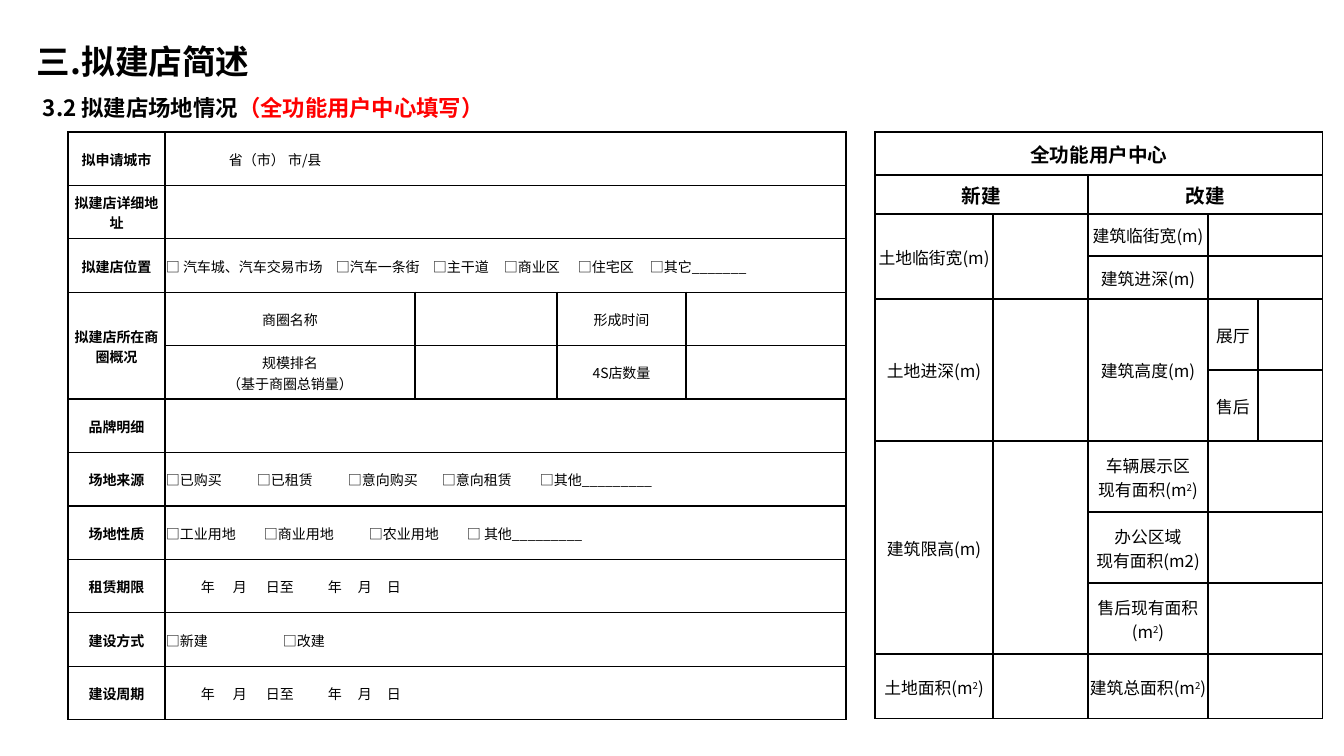
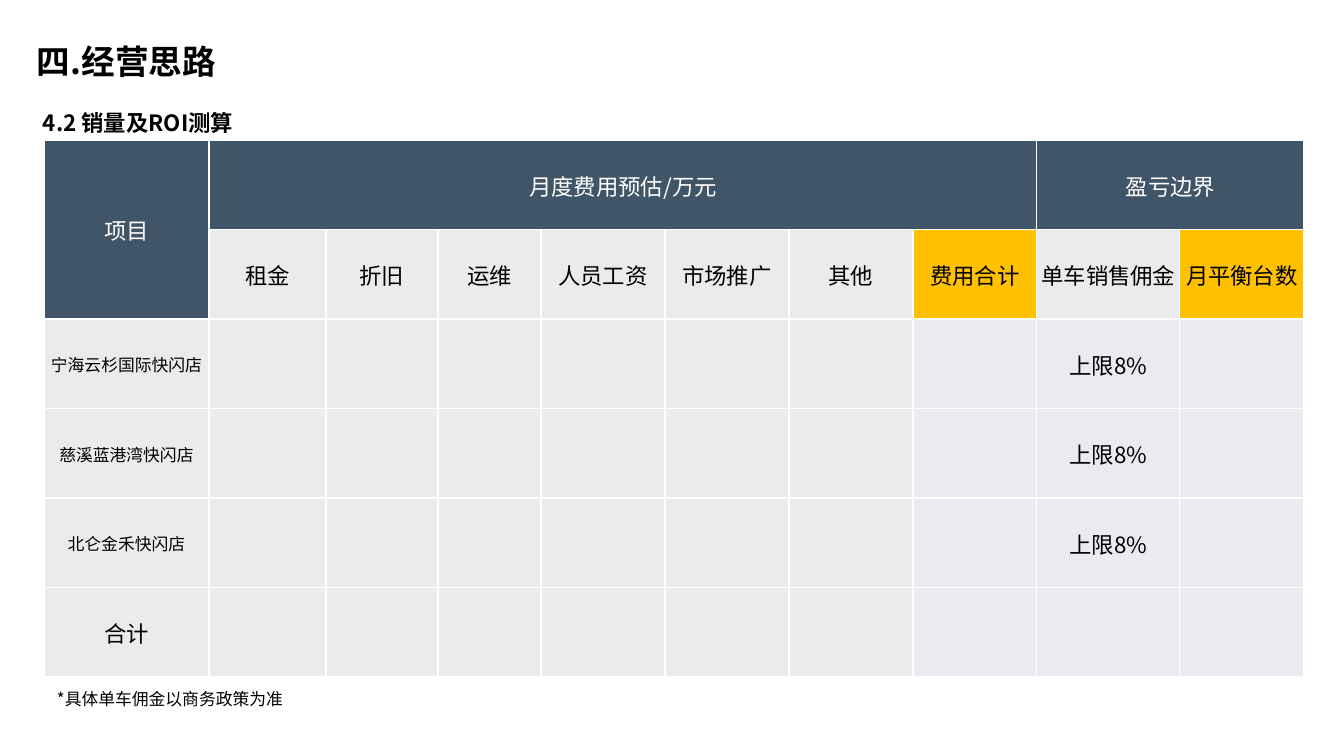
from itertools import groupby

from lxml import etree
from pptx import Presentation
from pptx.dml.color import RGBColor
from pptx.enum import text as t
from pptx.oxml.ns import qn
from pptx.util import Pt

PX = 9071  # EMU per px, 100.8 px to the inch


class Theme:
    font = "Noto Sans CJK SC"
    black, white, red = "000000", "FFFFFF", "FF0000"
    navy, gold, grey, mist = "405567", "FFC000", "E9EBED", "E9EBF0"
    heading = dict(size=24, bold=True, color=black)
    subtitle = dict(size=16, bold=True, color=black)
    alert = dict(subtitle, color=red)
    label = dict(size=10, bold=True, color=black)
    entry = dict(label, bold=False)
    plan_head = dict(size=14, bold=True, color=black)
    body = dict(size=12, bold=False, color=black)
    cost = dict(body, size=16)
    cost_head = dict(cost, color=white)


CENTER, LEFT = t.PP_ALIGN.CENTER, t.PP_ALIGN.LEFT


def write(tf, text, style, align=LEFT, tabs=(), spacing=None):
    """Append text; ~ is an underlined tab, ² a raised 2, a newline a new paragraph."""
    p = tf.paragraphs[-1]
    for mark, chars in groupby(text, lambda c: c if c in "~²\n" else ""):
        if mark == "\n":
            p = tf.add_paragraph()
            continue
        p.alignment, p.line_spacing = align, spacing
        r = p.add_run()
        r.text = {"~": "\t", "²": "2"}.get(mark) or "".join(chars)
        values = dict(name=Theme.font, size=Pt(style["size"]), bold=style["bold"],
                      underline=True if mark == "~" else None)
        for key, value in values.items():
            setattr(r.font, key, value)
        r.font.color.rgb = RGBColor.from_string(style["color"])
        rPr = r._r.get_or_add_rPr()
        etree.SubElement(rPr, qn("a:ea"), typeface=Theme.font)
        if mark == "²":
            rPr.set("baseline", "30000")
    if tabs:
        tab_list = etree.SubElement(p._p.get_or_add_pPr(), qn("a:tabLst"))
        for stop in tabs:
            etree.SubElement(tab_list, qn("a:tab"), pos=str(stop * PX), algn="l")


def grid(s, left, top, height, cols, row_count, spans, edge):
    """Add an unfilled table with even rows; spans are (row, column, last row, last column)."""
    table = s.shapes.add_table(row_count, len(cols), left * PX, top * PX,
                               sum(cols) * PX, height * PX).table
    table.first_row = table.horz_banding = False
    for col, width in zip(table.columns, cols):
        col.width = width * PX
    for cell in table.iter_cells():
        cell.margin_left = cell.margin_right = cell.margin_top = PX
        cell.margin_bottom = 0
        cell.vertical_anchor = t.MSO_ANCHOR.MIDDLE
        tcPr = cell._tc.get_or_add_tcPr()
        for side in ("lnL", "lnR", "lnT", "lnB"):
            ln = etree.SubElement(tcPr, qn("a:" + side), w=str(Pt(1)))
            fill = etree.SubElement(ln, qn("a:solidFill"))
            etree.SubElement(fill, qn("a:srgbClr"), val=edge)
        cell.fill.background()
    for row, col, last_row, last_col in spans:
        table.cell(row, col).merge(table.cell(last_row, last_col))
    return table


prs = Presentation()
prs.slide_width, prs.slide_height = 1344 * PX, 756 * PX

# Headings
slides = []
for heading, subtitle, alert, top in (
    ("三.拟建店简述", "3.2 拟建店场地情况", "（全功能用户中心填写）", 92),
    ("四.经营思路", "4.2 销量及ROI测算", "", 107),
):
    s = prs.slides.add_slide(prs.slide_layouts[5])
    slides.append(s)
    title = s.shapes.title
    title.left, title.top, title.width, title.height = 21 * PX, top * PX, 1065 * PX, 34 * PX
    tf = title.text_frame
    tf.auto_size = t.MSO_AUTO_SIZE.NONE
    tf.vertical_anchor = t.MSO_ANCHOR.MIDDLE
    tf.margin_left = 22 * PX
    write(tf, subtitle, Theme.subtitle, spacing=0.9)
    write(tf, alert, Theme.alert, spacing=0.9)

    tf = s.shapes.add_textbox(37 * PX, 36 * PX, 738 * PX, 55 * PX).text_frame
    tf.margin_left = tf.margin_top = tf.margin_right = tf.margin_bottom = 0
    tf.vertical_anchor = t.MSO_ANCHOR.MIDDLE
    tf.word_wrap = True
    write(tf, heading, Theme.heading, spacing=0.9)
site, costs = slides

# Site form
period = "~年~月~日至~年~月~日"
period_tabs = (35, 67, 100, 162, 192, 221)
form_rows = (
    ("拟申请城市", "~省（市）~ 市/县", (63, 119, 178)),
    ("拟建店详细地址", "", ()),
    ("拟建店位置", "□ 汽车城、汽车交易市场\t□汽车一条街\t□主干道\t□商业区\t□住宅区\t□其它_______~",
     (170, 267, 338, 412, 484, 605)),
    ("拟建店所在商圈概况", "", ()),
    ("", "", ()),
    ("品牌明细", "", ()),
    ("场地来源", "□已购买\t□已租赁\t□意向购买\t□意向租赁\t□其他_________~",
     (91, 182, 276, 374, 508)),
    ("场地性质", "□工业用地\t□商业用地\t□农业用地\t□ 其他_________~", (98, 203, 301, 422)),
    ("租赁期限", period, period_tabs),
    ("建设方式", "□新建\t□改建", (117,)),
    ("建设周期", period, period_tabs),
)
district_rows = (3, 4)
form_spans = [(row, 1, row, 4) for row in range(len(form_rows)) if row not in district_rows]
form = grid(site, 68, 132, 588, (97, 250, 142, 129, 160), len(form_rows),
            form_spans + [(3, 0, 4, 0)], Theme.black)
for row, (label, entry, tabs) in enumerate(form_rows):
    write(form.cell(row, 0).text_frame, label, Theme.label, CENTER)
    write(form.cell(row, 1).text_frame, entry, Theme.entry, tabs=tabs)
for row, labels in zip(district_rows, (("商圈名称", "形成时间"),
                                       ("规模排名\n（基于商圈总销量）", "4S店数量"))):
    for col, label in zip((1, 3), labels):
        write(form.cell(row, col).text_frame, label, Theme.entry, CENTER)

# Building plan
plan_heights = (43, 39, 42, 43, 71, 71, 71, 71, 71, 65)
plan_spans = [(0, 0, 0, 4), (1, 0, 1, 1), (1, 2, 1, 4), (4, 2, 5, 2)]
plan_spans += [(first, col, last, col) for first, last in ((2, 3), (4, 5), (6, 8)) for col in (0, 1)]
plan_spans += [(row, 3, row, 4) for row in (2, 3, 6, 7, 8, 9)]
plan = grid(site, 875, 132, sum(plan_heights), (118, 95, 120, 50, 65), len(plan_heights),
            plan_spans, Theme.black)
for row, height in zip(plan.rows, plan_heights):
    row.height = height * PX
plan_labels = {
    (0, 0): "全功能用户中心", (1, 0): "新建", (1, 2): "改建",
    (2, 0): "土地临街宽(m)", (2, 2): "建筑临街宽(m)", (3, 2): "建筑进深(m)",
    (4, 0): "土地进深(m)", (4, 2): "建筑高度(m)", (4, 3): "展厅", (5, 3): "售后",
    (6, 0): "建筑限高(m)", (6, 2): "车辆展示区\n现有面积(m²)",
    (7, 2): "办公区域\n现有面积(m2)", (8, 2): "售后现有面积(m²)",
    (9, 0): "土地面积(m²)", (9, 2): "建筑总面积(m²)",
}
for (row, col), label in plan_labels.items():
    write(plan.cell(row, col).text_frame, label, Theme.plan_head if row < 2 else Theme.body, CENTER)

# Monthly costs
groups = {0: "项目", 1: "月度费用预估/万元", 8: "盈亏边界"}
items = ("租金", "折旧", "运维", "人员工资", "市场推广", "其他", "费用合计", "单车销售佣金", "月平衡台数")
stores = ("宁海云杉国际快闪店", "慈溪蓝港湾快闪店", "北仑金禾快闪店")
cost_table = grid(costs, 44, 140, 537, (165, 117, 112, 103, 124, 124, 124, 124, 143, 124), 6,
                  [(0, 0, 1, 0), (0, 1, 0, 7), (0, 8, 0, 9)], Theme.white)
for row in range(6):
    for col in range(10):
        if row == 0 or (row == 1 and col == 0):
            color = Theme.navy
        elif row == 1:
            color = Theme.gold if col in (7, 9) else Theme.grey
        else:
            color = Theme.mist if col >= 7 else Theme.grey
        fill = cost_table.cell(row, col).fill
        fill.solid()
        fill.fore_color.rgb = RGBColor.from_string(color)
for col, group in groups.items():
    write(cost_table.cell(0, col).text_frame, group, Theme.cost_head, CENTER)
for col, item in enumerate(items, 1):
    write(cost_table.cell(1, col).text_frame, item, Theme.cost, CENTER)
for row, store in enumerate(stores, 2):
    write(cost_table.cell(row, 0).text_frame, store, Theme.body, CENTER)
    write(cost_table.cell(row, 8).text_frame, "上限8%", Theme.cost, CENTER)
write(cost_table.cell(5, 0).text_frame, "合计", Theme.cost, CENTER)

tf = costs.shapes.add_textbox(47 * PX, 684 * PX, 250 * PX, 30 * PX).text_frame
tf.word_wrap = True
write(tf, "*具体单车佣金以商务政策为准", Theme.body)

prs.save("out.pptx")
